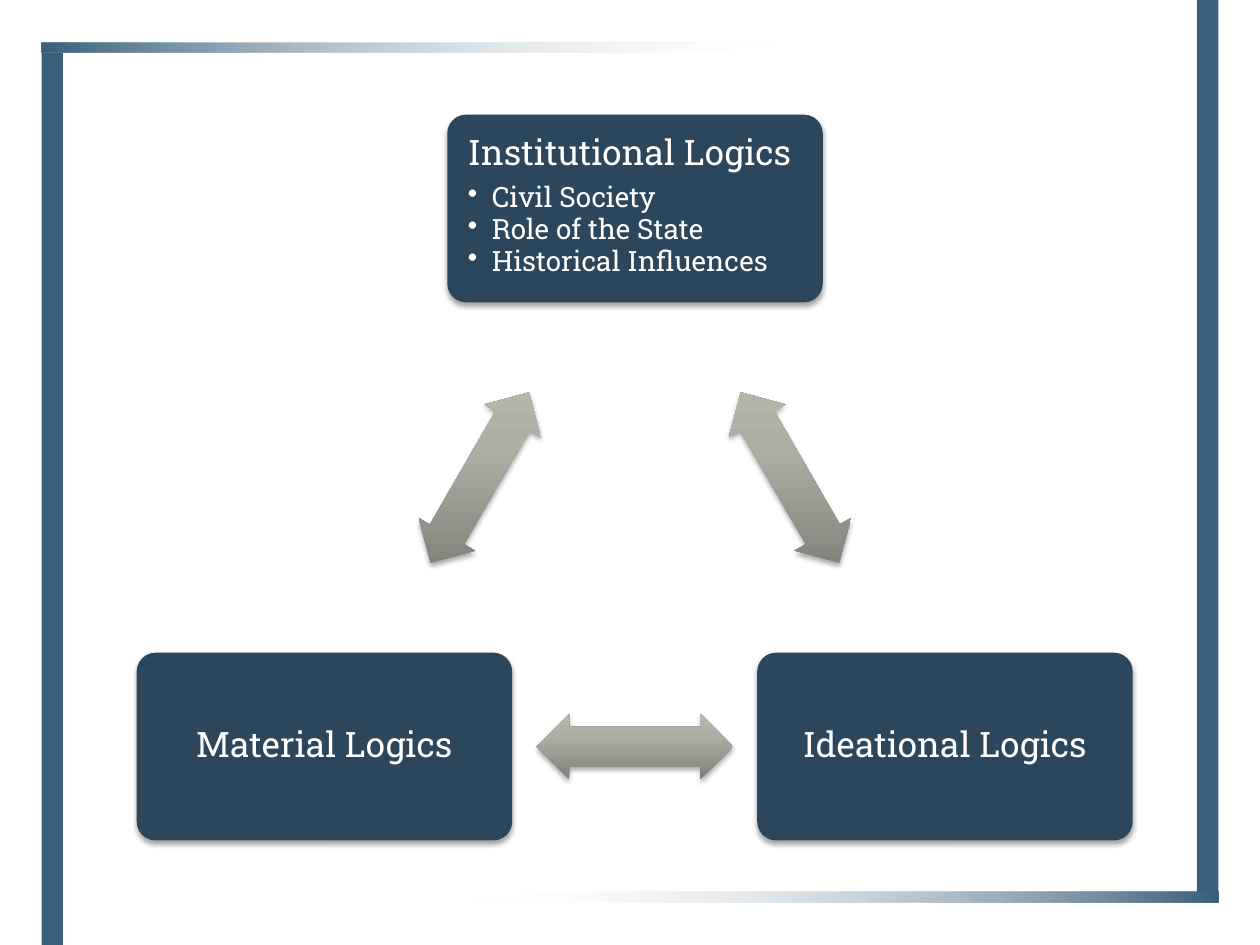
from math import atan2, degrees

from lxml.etree import SubElement
from pptx import Presentation
from pptx.dml.color import RGBColor
from pptx.enum.shapes import MSO_SHAPE
from pptx.enum.text import MSO_ANCHOR, PP_ALIGN
from pptx.oxml import parse_xml
from pptx.oxml.ns import nsdecls, qn
from pptx.util import Inches, Pt

COLORS = {
    "bar": "3A5F7B",
    "box": "2C475C",
    "text": "FFFFFF",
    "fade": "FFFFFF",
    "arrow_dark": "7C7F76",
    "arrow_mid": "ACB0A4",
    "arrow_light": "B4B9AC",
    "shadow": "000000",
}
FONT = "Roboto Slab"
BOX_W, BOX_H = 2.98, 1.49
ARROW_W, ARROW_H = 1.56, 0.52
BOXES = [
    ((5.04, 1.655), "Institutional Logics",
     ["Civil Society", "Role of the State", "Historical Influences"]),
    ((7.5, 5.925), "Ideational Logics", []),
    ((2.575, 5.925), "Material Logics", []),
]
BAR_STOPS = [(0, "bar", 100), (65, "fade", 0), (100, "fade", 0)]
ARROW_STOPS = [(0, "arrow_dark", 100), (65, "arrow_mid", 100), (100, "arrow_light", 100)]


def add_shape(slide, kind, x, y, w, h):
    sp = slide.shapes.add_shape(kind, Inches(x), Inches(y), Inches(w), Inches(h))
    sp.shadow.inherit = False
    sp.line.fill.background()
    return sp


def set_solid(sp, color):
    sp.fill.solid()
    sp.fill.fore_color.rgb = RGBColor.from_string(COLORS[color])


def set_gradient(sp, stops, angle):
    stop_xml = "".join(
        f'<a:gs pos="{pos * 1000}"><a:srgbClr val="{COLORS[color]}">'
        f'<a:alpha val="{alpha * 1000}"/></a:srgbClr></a:gs>'
        for pos, color, alpha in stops
    )
    grad = parse_xml(
        f'<a:gradFill {nsdecls("a")} rotWithShape="0"><a:gsLst>{stop_xml}</a:gsLst>'
        f'<a:lin ang="{angle * 60000}" scaled="0"/></a:gradFill>'
    )
    sp._element.spPr.find(qn("a:prstGeom")).addnext(grad)


def add_shadow(sp):
    effects = sp._element.spPr.find(qn("a:effectLst"))
    effects.append(parse_xml(
        f'<a:outerShdw {nsdecls("a")} blurRad="{Pt(3.1)}" dist="{Pt(2)}" dir="5400000" '
        f'rotWithShape="0"><a:srgbClr val="{COLORS["shadow"]}"><a:alpha val="35000"/>'
        f'</a:srgbClr></a:outerShdw>'
    ))


def add_text(p, text, size, space_after, align):
    p.alignment = align
    p.line_spacing = 0.9
    p.space_after = Pt(space_after)
    r = p.add_run()
    r.text = text
    r.font.name = FONT
    r.font.size = Pt(size)
    r.font.color.rgb = RGBColor.from_string(COLORS["text"])


def set_bullet(p):
    pPr = p._p.get_or_add_pPr()
    pPr.set("marL", str(Inches(0.19)))
    pPr.set("indent", str(Inches(-0.19)))
    SubElement(pPr, qn("a:buChar"), char="•")


def add_box(slide, center, title, items):
    x, y = center
    sp = add_shape(slide, MSO_SHAPE.ROUNDED_RECTANGLE,
                   x - BOX_W / 2, y - BOX_H / 2, BOX_W, BOX_H)
    sp.adjustments[0] = 0.1
    set_solid(sp, "box")
    add_shadow(sp)
    tf = sp.text_frame
    tf.word_wrap = True
    tf.margin_left = tf.margin_right = tf.margin_top = tf.margin_bottom = Inches(0.12)
    tf.vertical_anchor = MSO_ANCHOR.TOP if items else MSO_ANCHOR.MIDDLE
    add_text(tf.paragraphs[0], title, 20, 6, PP_ALIGN.LEFT if items else PP_ALIGN.CENTER)
    for item in items:
        p = tf.add_paragraph()
        p.level = 1
        set_bullet(p)
        add_text(p, item, 16, 1, PP_ALIGN.LEFT)


def add_arrow(slide, start, end):
    x, y = (start[0] + end[0]) / 2, (start[1] + end[1]) / 2
    sp = add_shape(slide, MSO_SHAPE.LEFT_RIGHT_ARROW,
                   x - ARROW_W / 2, y - ARROW_H / 2, ARROW_W, ARROW_H)
    sp.adjustments[0] = 0.6
    sp.adjustments[1] = 0.5
    sp.rotation = round(degrees(atan2(end[1] - start[1], end[0] - start[0]))) % 360
    set_gradient(sp, ARROW_STOPS, 270)
    add_shadow(sp)


def add_frame(slide):
    for x, y in [(9.5, 0), (0.33, 0.42)]:
        set_solid(add_shape(slide, MSO_SHAPE.RECTANGLE, x, y, 0.17, 7.08), "bar")
    for x, y, angle in [(0.5, 7.08, 180), (0.33, 0.34, 0)]:
        sp = add_shape(slide, MSO_SHAPE.RECTANGLE, x, y, 9.17, 0.08)
        set_gradient(sp, BAR_STOPS, angle)


def main():
    prs = Presentation()
    prs.slide_width, prs.slide_height = Inches(10), Inches(7.5)
    slide = prs.slides.add_slide(prs.slide_layouts[6])
    add_frame(slide)
    centers = [center for center, _, _ in BOXES]
    for i, box in enumerate(BOXES):
        add_box(slide, *box)
        add_arrow(slide, centers[i], centers[(i + 1) % len(centers)])
    prs.save("out.pptx")


if __name__ == "__main__":
    main()
